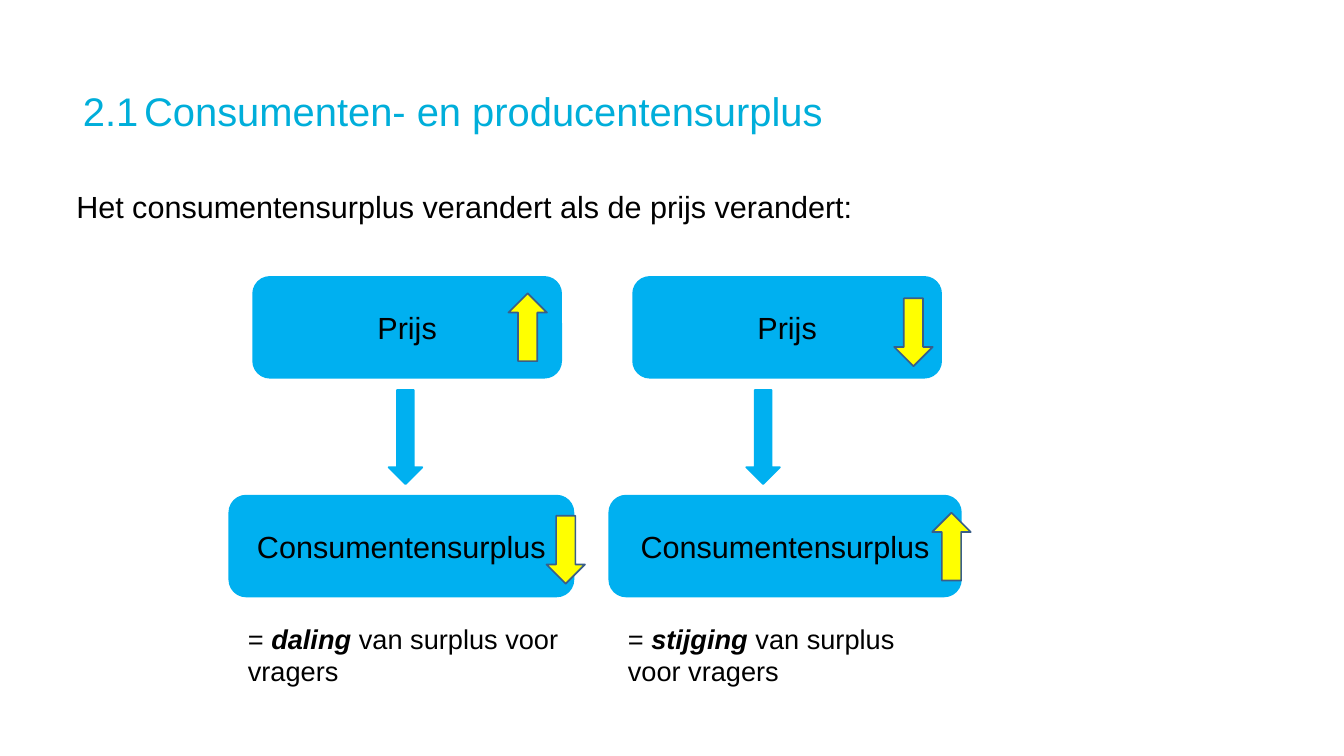
"""Build the slide on how consumer surplus changes with the price."""
from pptx import Presentation
from pptx.dml.color import RGBColor as RGB
from pptx.enum.shapes import MSO_SHAPE as SHAPE
from pptx.enum.text import MSO_ANCHOR as ANCHOR, PP_ALIGN as ALIGN
from pptx.oxml.ns import qn
from pptx.util import Cm, Pt
from lxml.etree import SubElement

COLORS = {"title": "00AEDA", "text": "000000", "box": "00B0F0",
          "arrow": "FFFF00", "edge": "395E89"}
TITLE = "2.1\tConsumenten- en producentensurplus"
INTRO = "Het consumentensurplus verandert als de prijs verandert:"
CAUSE, EFFECT = "Prijs", "Consumentensurplus"
UP, DOWN = SHAPE.UP_ARROW, SHAPE.DOWN_ARROW
COLUMNS = [
    {"left": 9.53, "width": 14.3, "stem": 16.15, "change": "daling",
     "arrows": [(UP, 21.13, 12.19), (DOWN, 22.71, 21.44)]},
    {"left": 25.32, "width": 14.61, "stem": 31.01, "change": "stijging",
     "arrows": [(DOWN, 37.16, 12.4), (UP, 38.74, 21.31)]},
]
FORMATS = {
    "title": {"size": Pt(47), "name": "Arial"},
    "body": {"size": Pt(36), "name": "Arial"},
    "note": {"size": Pt(32), "name": "Arial"},
    "strong": {"size": Pt(32), "name": "Arial", "bold": True, "italic": True},
}
PAD = {"margin_left": Cm(0.25), "margin_right": Cm(0.25),
       "margin_top": Cm(0.13), "margin_bottom": Cm(0.13)}
CAUSE_TOP, STEM_TOP, EFFECT_TOP, NOTE_TOP = 11.51, 16.21, 20.6, 25.73
CAUSE_INDENT, NOTE_INDENT, NOTE_TRIM = 0.99, 0.52, 0.61
CAUSE_WIDTH, BOX_HEIGHT, NOTE_HEIGHT = 12.8, 4.19, 3


def assign(target, values):
    for name, value in values.items():
        setattr(target, name, value)


def write(tf, runs, color="text", pad=PAD):
    assign(tf, {**pad, "word_wrap": True})
    p = tf.paragraphs[0]
    for text, style in runs:
        r = p.add_run()
        r.text = text
        assign(r.font, FORMATS[style])
        r.font.color.rgb = RGB.from_string(COLORS[color])
    return p


def add_text(s, at, runs, **options):
    tf = s.shapes.add_textbox(*map(Cm, at)).text_frame
    write(tf, runs, **options)
    return tf


def add_shape(s, kind, at, fill="box", edge="box"):
    sp = s.shapes.add_shape(kind, *map(Cm, at))
    sp.shadow.inherit = False
    sp.fill.solid()
    sp.fill.fore_color.rgb = RGB.from_string(COLORS[fill])
    sp.line.color.rgb = RGB.from_string(COLORS[edge])
    sp.line.width = Pt(2)
    return sp


def add_box(s, at, label):
    sp = add_shape(s, SHAPE.ROUNDED_RECTANGLE, at)
    sp.text_frame.vertical_anchor = ANCHOR.MIDDLE
    write(sp.text_frame, [(label, "body")]).alignment = ALIGN.CENTER


def add_title(s):
    tf = add_text(s, (3.45, 3.45, 48.9, 2.31), [(TITLE, "title")],
                  color="title", pad=dict.fromkeys(PAD, 0))
    tf.vertical_anchor = ANCHOR.MIDDLE
    tabs = SubElement(tf.paragraphs[0]._p.get_or_add_pPr(), qn("a:tabLst"))
    SubElement(tabs, qn("a:tab"), pos=str(Cm(2.54)), algn="l")


def add_column(s, left, width, stem, change, arrows):
    add_box(s, (left + CAUSE_INDENT, CAUSE_TOP, CAUSE_WIDTH, BOX_HEIGHT), CAUSE)
    add_shape(s, DOWN, (stem, STEM_TOP, 1.4, 3.91))
    add_box(s, (left, EFFECT_TOP, width, BOX_HEIGHT), EFFECT)
    for kind, x, y in arrows:
        add_shape(s, kind, (x, y, 1.6, 2.82), "arrow", "edge")
    add_text(s, (left + NOTE_INDENT, NOTE_TOP, width - NOTE_TRIM, NOTE_HEIGHT),
             [("= ", "note"), (change, "strong"),
              (" van surplus voor vragers", "note")])


def main():
    prs = Presentation()
    prs.slide_width, prs.slide_height = Cm(55.85), Cm(31.42)
    s = prs.slides.add_slide(prs.slide_layouts[6])
    add_title(s)
    add_text(s, (2.92, 7.7, 37.41, 1.8), [(INTRO, "body")])
    for column in COLUMNS:
        add_column(s, **column)
    prs.save("out.pptx")


if __name__ == "__main__":
    main()
